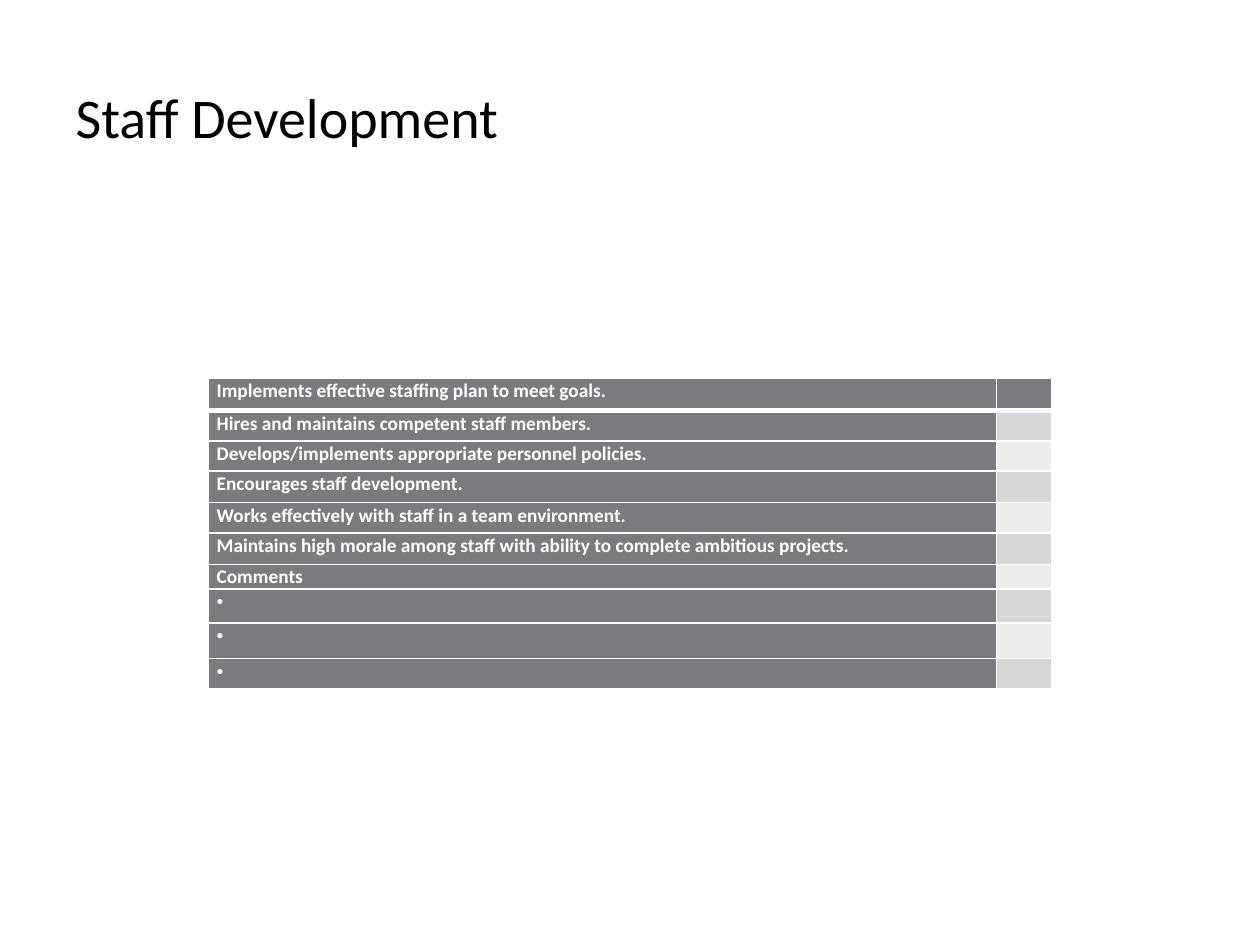
from dataclasses import dataclass

from lxml.etree import SubElement
from pptx import Presentation
from pptx.dml.color import RGBColor as RGB
from pptx.enum.text import MSO_ANCHOR as ANCHOR, PP_ALIGN as ALIGN
from pptx.oxml.ns import qn
from pptx.util import Inches, Pt


@dataclass(frozen=True)
class Theme:
    font: str = "Calibri"
    ink: str = "000000"
    paper: str = "FFFFFF"
    label: str = "797B7E"
    bands: tuple = ("ECECEC", "D7D7D8")
    title_size: int = 32
    body_size: int = 11
    rule: int = 1
    header_rule: int = 3


THEME = Theme()
TITLE = "Staff Development"
CRITERIA = [
    "Implements effective staffing plan to meet goals.",
    "Hires and maintains competent staff members.",
    "Develops/implements appropriate personnel policies.",
    "Encourages staff development.",
    "Works effectively with staff in a team environment.",
    "Maintains high morale among staff with ability to complete ambitious projects.",
    "Comments",
]
COMMENT_LINES = 3
COL_WIDTHS = [6.26, 0.44]
ROW_HEIGHTS = [0.26, 0.24, 0.24, 0.25, 0.24, 0.25, 0.18, 0.27, 0.28, 0.24]


def set_format(target, values):
    for name, value in values.items():
        setattr(target, name, value)


def style_font(font, size, color, bold=False):
    set_format(font, {"name": THEME.font, "size": Pt(size), "bold": bold})
    font.color.rgb = RGB.from_string(color)


def add_title(slide, text, left, top, width, height):
    sp = slide.shapes.title
    set_format(sp, {"left": left, "top": top, "width": width, "height": height})
    tf = sp.text_frame
    set_format(tf, {"text": text, "vertical_anchor": ANCHOR.MIDDLE, "word_wrap": True})
    p = tf.paragraphs[0]
    p.alignment = ALIGN.LEFT
    style_font(p.runs[0].font, THEME.title_size, THEME.ink)


def set_borders(cell, bottom):
    """Draw the four cell borders; they must come before the cell's fill."""
    tc_pr = cell._tc.get_or_add_tcPr()
    widths = {"lnL": THEME.rule, "lnR": THEME.rule, "lnT": THEME.rule, "lnB": bottom}
    for tag, width in widths.items():
        ln = SubElement(tc_pr, qn(f"a:{tag}"), w=str(Pt(width)))
        fill = SubElement(ln, qn("a:solidFill"))
        SubElement(fill, qn("a:srgbClr"), val=THEME.paper)


def add_bullet(p):
    p_pr = p._p.get_or_add_pPr()
    set_format(p, {"line_spacing": 1.05})
    SubElement(p_pr, qn("a:buFont"), typeface="Arial")
    SubElement(p_pr, qn("a:buChar"), char="•")


def fill_cell(cell, text, color, bottom, bullet=False):
    set_format(cell, {
        "margin_left": Inches(0.07), "margin_right": Inches(0.07),
        "margin_top": 0, "margin_bottom": 0, "vertical_anchor": ANCHOR.TOP,
    })
    set_borders(cell, bottom)
    cell.fill.solid()
    cell.fill.fore_color.rgb = RGB.from_string(color)
    p = cell.text_frame.paragraphs[0]
    p.line_spacing = 1.05
    if bullet:
        add_bullet(p)
    if text:
        r = p.add_run()
        r.text = text
        style_font(r.font, THEME.body_size, THEME.paper, bold=not bullet)
    else:
        SubElement(p._p, qn("a:endParaRPr"), sz=str(THEME.body_size * 100))


def add_rating_table(slide, left, top, width, height):
    """Criteria on the left, an empty banded rating column on the right."""
    labels = CRITERIA + [" "] * COMMENT_LINES  # a blank keeps the bullet visible
    table = slide.shapes.add_table(
        len(labels), len(COL_WIDTHS), left, top, width, height).table
    for col, share in zip(table.columns, COL_WIDTHS):
        col.width = int(width * share / sum(COL_WIDTHS))
    for row, share in zip(table.rows, ROW_HEIGHTS):
        row.height = int(height * share / sum(ROW_HEIGHTS))
    for i, label in enumerate(labels):
        bottom = THEME.rule if i else THEME.header_rule
        band = THEME.bands[i % 2] if i else THEME.label
        fill_cell(table.cell(i, 0), label, THEME.label, bottom, i >= len(CRITERIA))
        fill_cell(table.cell(i, 1), "", band, bottom)


def main():
    prs = Presentation()
    set_format(prs, {"slide_width": Inches(10), "slide_height": Inches(7.5)})
    slide = prs.slides.add_slide(prs.slide_layouts[5])
    add_title(slide, TITLE, Inches(0.5), Inches(0.3), Inches(9), Inches(1.25))
    add_rating_table(slide, Inches(1.65), Inches(3), Inches(6.7), Inches(2.45))
    prs.save("out.pptx")


if __name__ == "__main__":
    main()
